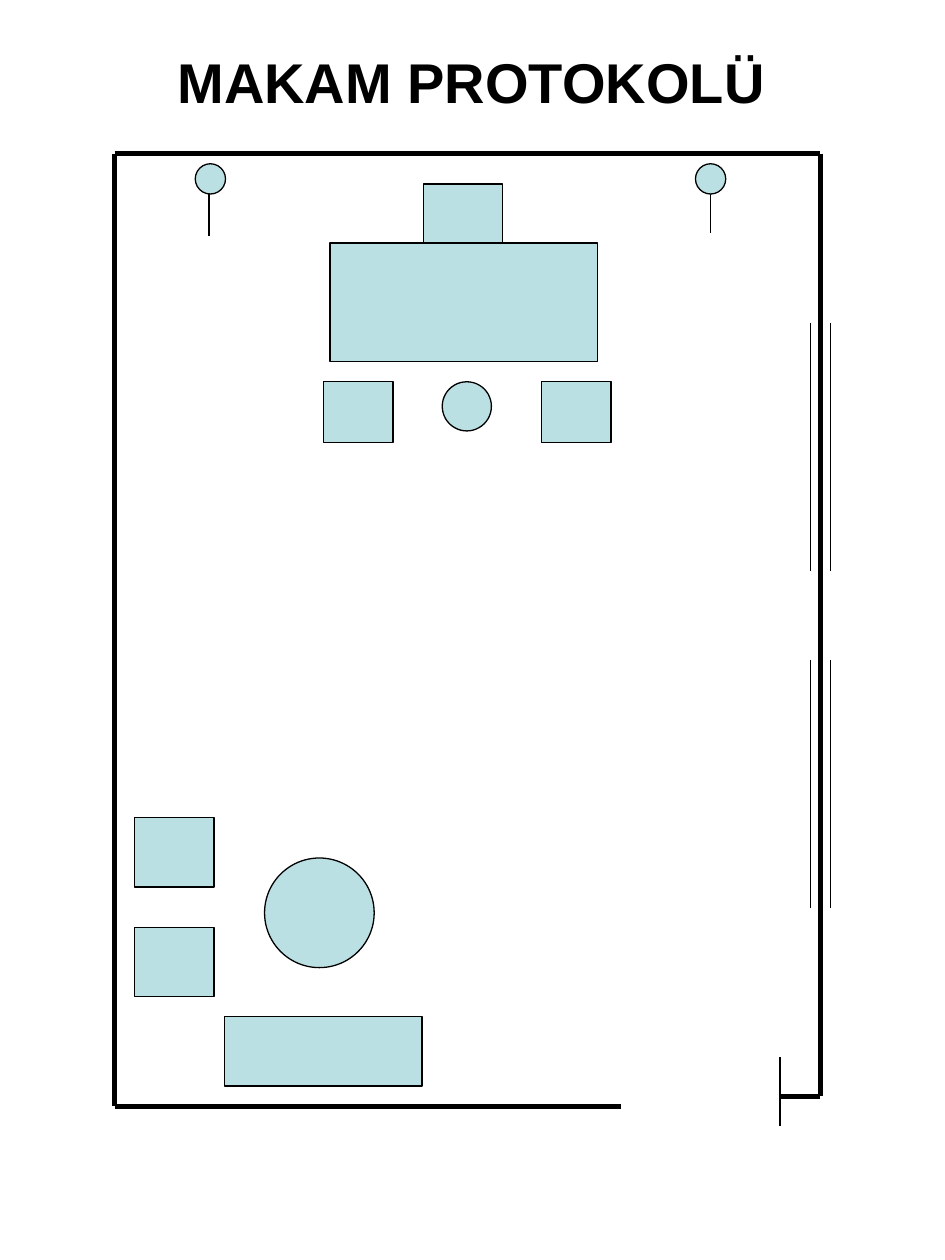
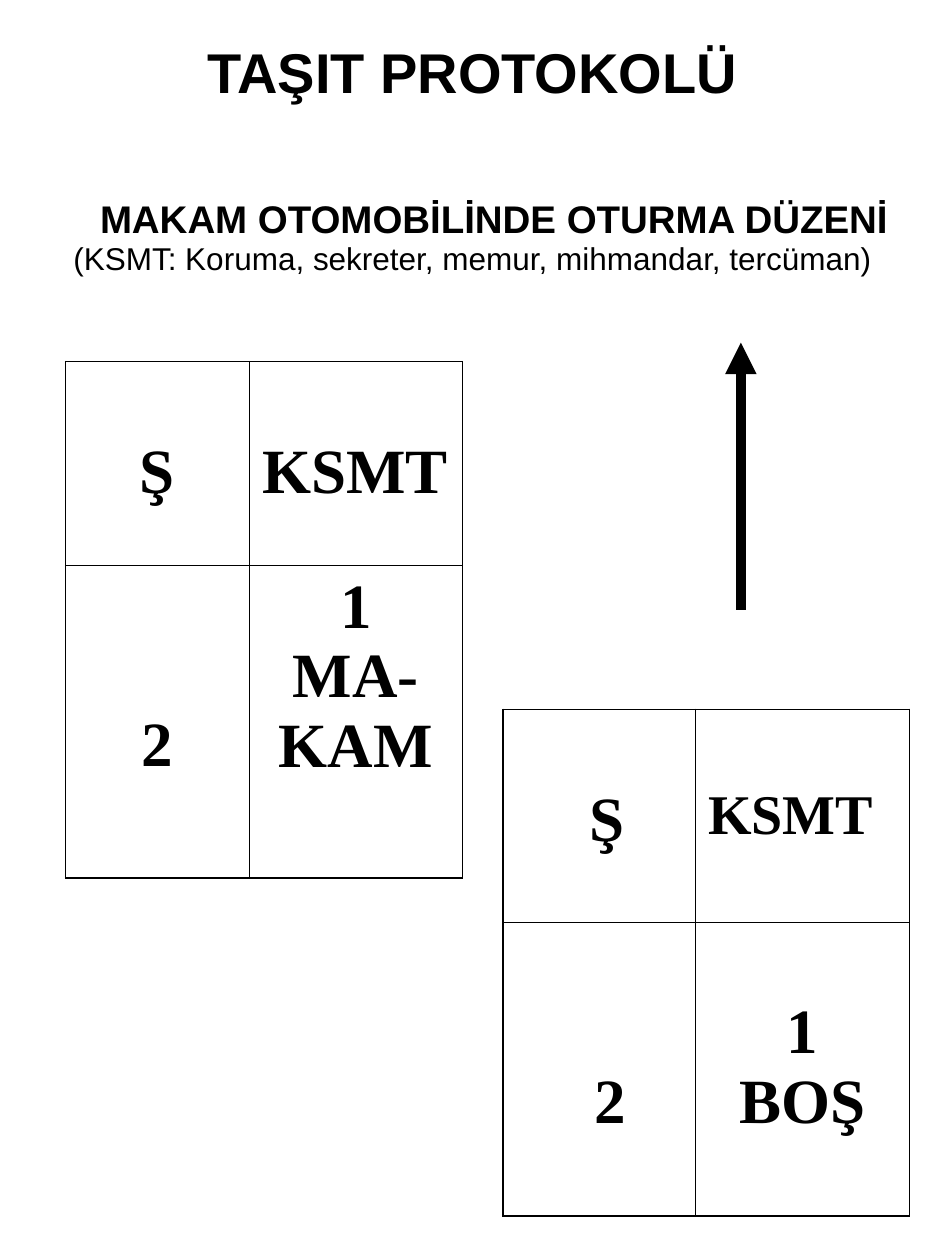
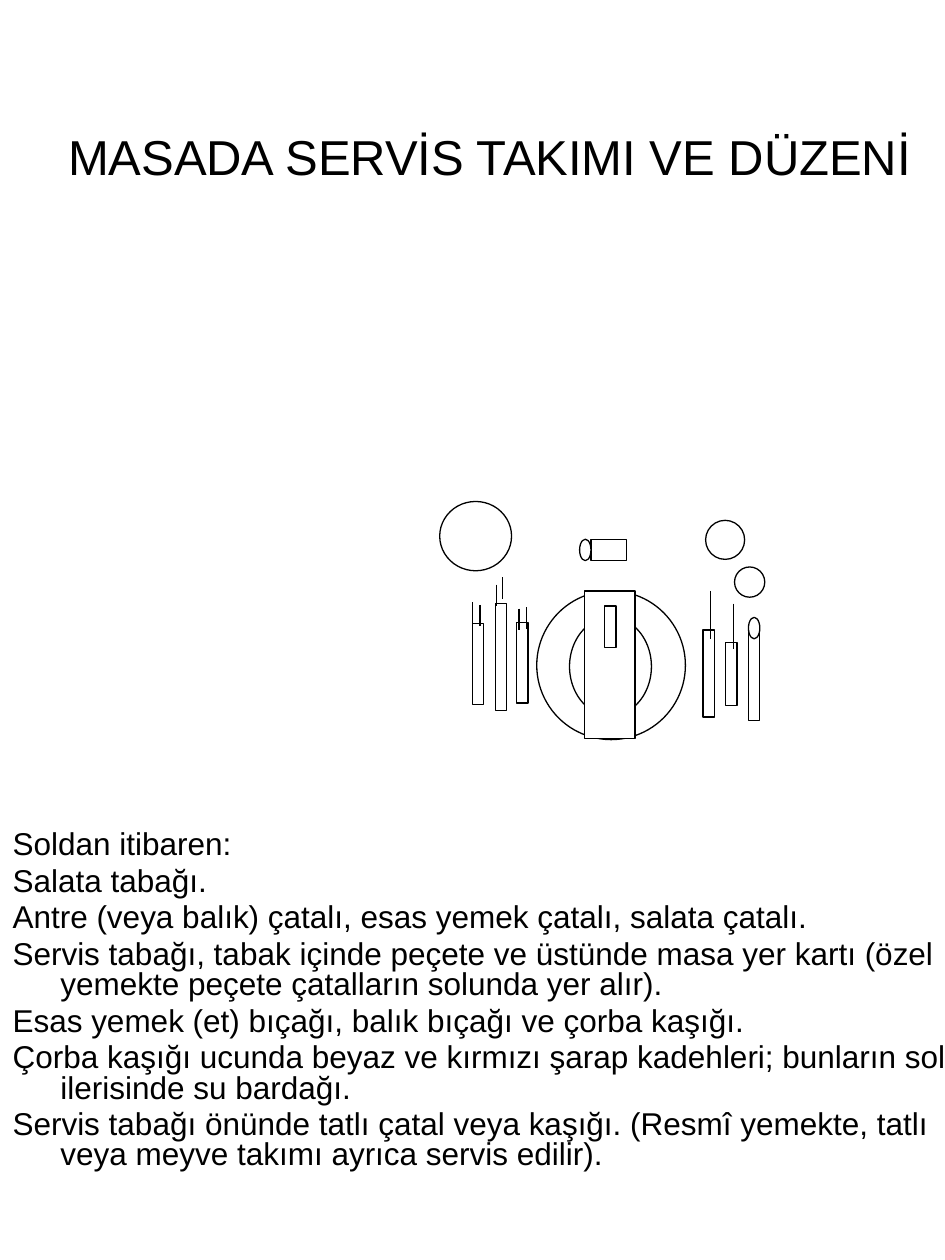
from dataclasses import dataclass
from typing import Sequence

from lxml import etree
from pptx import Presentation
from pptx import util as u
from pptx.dml.color import RGBColor
from pptx.enum import shapes, text
from pptx.oxml import ns

PX = u.Inches(1) // 100  # 100 px to the inch
BLACK = RGBColor(0x00, 0x00, 0x00)
WHITE = RGBColor(0xFF, 0xFF, 0xFF)
FURNITURE = RGBColor(0xBB, 0xE0, 0xE3)
SANS, SERIF = "Arial", "Times New Roman"
RECT, OVAL = shapes.MSO_SHAPE.RECTANGLE, shapes.MSO_SHAPE.OVAL
LEFT, CENTER = text.PP_ALIGN.LEFT, text.PP_ALIGN.CENTER
THIN, WALL, ARROW = 0.75, 3, 6


@dataclass(frozen=True)
class Item:
    x: int
    y: int
    w: int
    h: int
    kind: shapes.MSO_SHAPE = RECT


@dataclass(frozen=True)
class Line:
    x1: int
    y1: int
    x2: int
    y2: int
    width: float = THIN


@dataclass(frozen=True)
class Label:
    x: int
    y: int
    w: int
    h: int
    lines: Sequence[str]
    size: int
    bold: bool = False
    align: text.PP_ALIGN = CENTER


@dataclass(frozen=True)
class Seat:
    lines: Sequence[str]
    top: int  # inset above the first line
    left: int = 10
    size: int = 36
    align: text.PP_ALIGN = CENTER


@dataclass(frozen=True)
class Car:
    x: int
    y: int
    cols: Sequence[int]
    rows: Sequence[int]
    seats: Sequence[Sequence[Seat]]


def add_sub(parent: etree.ElementBase, tag: str, **attrs: str) -> etree.ElementBase:
    return etree.SubElement(parent, ns.qn(tag), attrs)


def write(tf, lines: Sequence[str], size: int, bold: bool, font: str, align: text.PP_ALIGN) -> None:
    for i, line in enumerate(lines):
        p = tf.paragraphs[0] if i == 0 else tf.add_paragraph()
        p.alignment = align
        r = p.add_run()
        r.text = line
        r.font.name, r.font.size, r.font.bold = font, u.Pt(size), bold
        r.font.color.rgb = BLACK


def add_label(s, label: Label):
    box = s.shapes.add_textbox(*(v * PX for v in (label.x, label.y, label.w, label.h)))
    tf = box.text_frame
    tf.word_wrap = True
    tf.margin_left = tf.margin_right = tf.margin_top = tf.margin_bottom = 0
    write(tf, label.lines, label.size, label.bold, SANS, label.align)
    return tf


def add_title(s, x: int, y: int, w: int, title: str, size: int = 32, bold: bool = True) -> None:
    add_label(s, Label(x, y, w, 55, [title], size, bold))


def add_items(s, items: Sequence[Item], fill: RGBColor) -> None:
    for item in items:
        sp = s.shapes.add_shape(item.kind, *(v * PX for v in (item.x, item.y, item.w, item.h)))
        sp.shadow.inherit = False
        sp.fill.solid()
        sp.fill.fore_color.rgb = fill
        sp.line.color.rgb = BLACK
        sp.line.width = u.Pt(THIN)


def add_line(s, line: Line, arrow: bool = False) -> None:
    ends = (v * PX for v in (line.x1, line.y1, line.x2, line.y2))
    c = s.shapes.add_connector(shapes.MSO_CONNECTOR.STRAIGHT, *ends)
    c.line.color.rgb = BLACK
    c.line.width = u.Pt(line.width)
    if arrow:
        add_sub(c.line._get_or_add_ln(), "a:tailEnd", type="triangle")
    add_sub(c._element.spPr, "a:effectLst")


def add_lines(s, lines: Sequence[Line]) -> None:
    for line in lines:
        add_line(s, line)


def border(cell) -> None:
    tc_pr = cell._tc.get_or_add_tcPr()
    for i, side in enumerate(("a:lnL", "a:lnR", "a:lnT", "a:lnB")):
        ln = etree.Element(ns.qn(side), w=str(u.Pt(1)))
        add_sub(add_sub(ln, "a:solidFill"), "a:srgbClr", val=str(BLACK))
        tc_pr.insert(i, ln)


def add_car(s, car: Car) -> None:
    """Draw the seats of a car as a table, front row on top."""
    frame = s.shapes.add_table(len(car.rows), len(car.cols), car.x * PX, car.y * PX,
                               sum(car.cols) * PX, sum(car.rows) * PX)
    tbl = frame.table
    tbl.first_row = tbl.horz_banding = False
    for col, width in zip(tbl.columns, car.cols):
        col.width = width * PX
    for row, height, seats in zip(tbl.rows, car.rows, car.seats):
        row.height = height * PX
        for cell, seat in zip(row.cells, seats):
            cell.fill.background()
            border(cell)
            cell.margin_left, cell.margin_top = seat.left * PX, seat.top * PX
            write(cell.text_frame, seat.lines, seat.size, True, SERIF, seat.align)


def office_slide(s) -> None:
    add_title(s, 37, 38, 674, "MAKAM PROTOKOLÜ")
    left, top, right, bottom, door = 91, 122, 651, 878, 619
    desk = [Item(262, 193, 212, 94), Item(336, 146, 63, 47)]
    visitors = [Item(257, 303, 55, 48), Item(430, 303, 55, 48), Item(351, 303, 39, 39, OVAL)]
    lounge = [Item(210, 681, 87, 87, OVAL), Item(178, 807, 157, 55),
              Item(107, 736, 63, 55), Item(107, 649, 63, 55)]
    add_items(s, desk + visitors + lounge, FURNITURE)
    add_lines(s, [
        Line(left, top, right, top, WALL),
        Line(left, top, left, bottom, WALL),
        Line(right, top, right, 870, WALL),
        Line(left, bottom, 493, bottom, WALL),
        Line(right, 870, door, 870, WALL),
        Line(door, 839, door, 894),
    ])
    add_lines(s, [Line(x, y, x, y + 197) for y in (256, 524) for x in (right - 8, right + 8)])
    add_lines(s, [Line(166, 147, 166, 187), Line(564, 146, 564, 185)])  # flag poles
    add_items(s, [Item(x, 130, 24, 24, OVAL) for x in (155, 552)], FURNITURE)


def car_slide(s) -> None:
    add_title(s, 0, 30, 750, "TAŞIT PROTOKOLÜ")
    add_label(s, Label(34, 155, 716, 35, ["MAKAM OTOMOBİLİNDE OTURMA DÜZENİ"], 22, True))
    add_label(s, Label(0, 190, 750, 30, ["(KSMT: Koruma, sekreter, memur, mihmandar, tercüman)"], 18))
    add_car(s, Car(52, 287, (146, 169), (162, 248), (
        (Seat(["Ş"], 60), Seat(["KSMT"], 60, align=LEFT)),
        (Seat(["2"], 115), Seat(["1", "MA-KAM"], 5)),
    )))
    add_car(s, Car(399, 563, (153, 170), (169, 233), (
        (Seat(["Ş"], 60, left=22), Seat(["KSMT"], 60, size=32, align=LEFT)),
        (Seat(["2"], 115, left=27), Seat(["1", "BOŞ"], 60)),
    )))
    add_line(s, Line(588, 484, 588, 272, ARROW), arrow=True)


def table_setting_slide(s) -> None:
    add_title(s, 27, 100, 723, "MASADA SERVİS TAKIMI VE DÜZENİ", 28, False)
    tf = add_label(s, Label(10, 660, 757, 280, [
        "Soldan itibaren:",
        "Salata tabağı.",
        "Antre (veya balık) çatalı, esas yemek çatalı, salata çatalı.",
        "Servis tabağı, tabak içinde peçete ve üstünde masa yer kartı "
        "(özel yemekte peçete çatalların solunda yer alır).",
        "Esas yemek (et) bıçağı, balık bıçağı ve çorba kaşığı.",
        "Çorba kaşığı ucunda beyaz ve kırmızı şarap kadehleri; "
        "bunların sol ilerisinde su bardağı.",
        "Servis tabağı önünde tatlı çatal veya kaşığı. "
        "(Resmî yemekte, tatlı veya meyve takımı ayrıca servis edilir).",
    ], 18, align=LEFT))
    for p in tf.paragraphs:
        p.line_spacing, p.space_before = 0.8, u.Pt(3.6)
        p_pr = p._p.get_or_add_pPr()
        p_pr.set("marL", str(38 * PX))
        p_pr.set("indent", str(-38 * PX))

    plate = [Item(426, 469, 118, 118, OVAL), Item(452, 490, 65, 78, OVAL)]
    napkin_and_card = [Item(464, 469, 40, 117), Item(480, 481, 9, 33)]
    glasses = [Item(560, 413, 31, 31, OVAL), Item(583, 450, 24, 24, OVAL)]
    knives = [Item(576, 510, 9, 50), Item(558, 500, 9, 69)]
    soup_spoon = [Item(594, 500, 9, 72), Item(594, 490, 9, 17, OVAL)]
    forks = [Item(375, 495, 9, 64), Item(393, 479, 9, 85), Item(410, 494, 9, 64)]
    salad_plate = [Item(349, 398, 57, 55, OVAL)]
    dessert_spoon = [Item(469, 428, 28, 17), Item(460, 428, 9, 17, OVAL)]
    add_items(s, plate + napkin_and_card + glasses + knives + soup_spoon + forks
              + salad_plate + dessert_spoon, WHITE)
    tines = ((375, 478), (381, 480), (394, 464), (399, 458), (412, 483), (418, 482))
    add_lines(s, [Line(x, y, x, y + 17) for x, y in tines])
    add_lines(s, [Line(564, 469, 564, 507), Line(582, 479, 582, 515)])  # knife blades


def main() -> None:
    prs = Presentation()
    prs.slide_width, prs.slide_height = 750 * PX, 1000 * PX
    for draw in (office_slide, car_slide, table_setting_slide):
        draw(prs.slides.add_slide(prs.slide_layouts[6]))
    prs.save("out.pptx")


if __name__ == "__main__":
    main()
